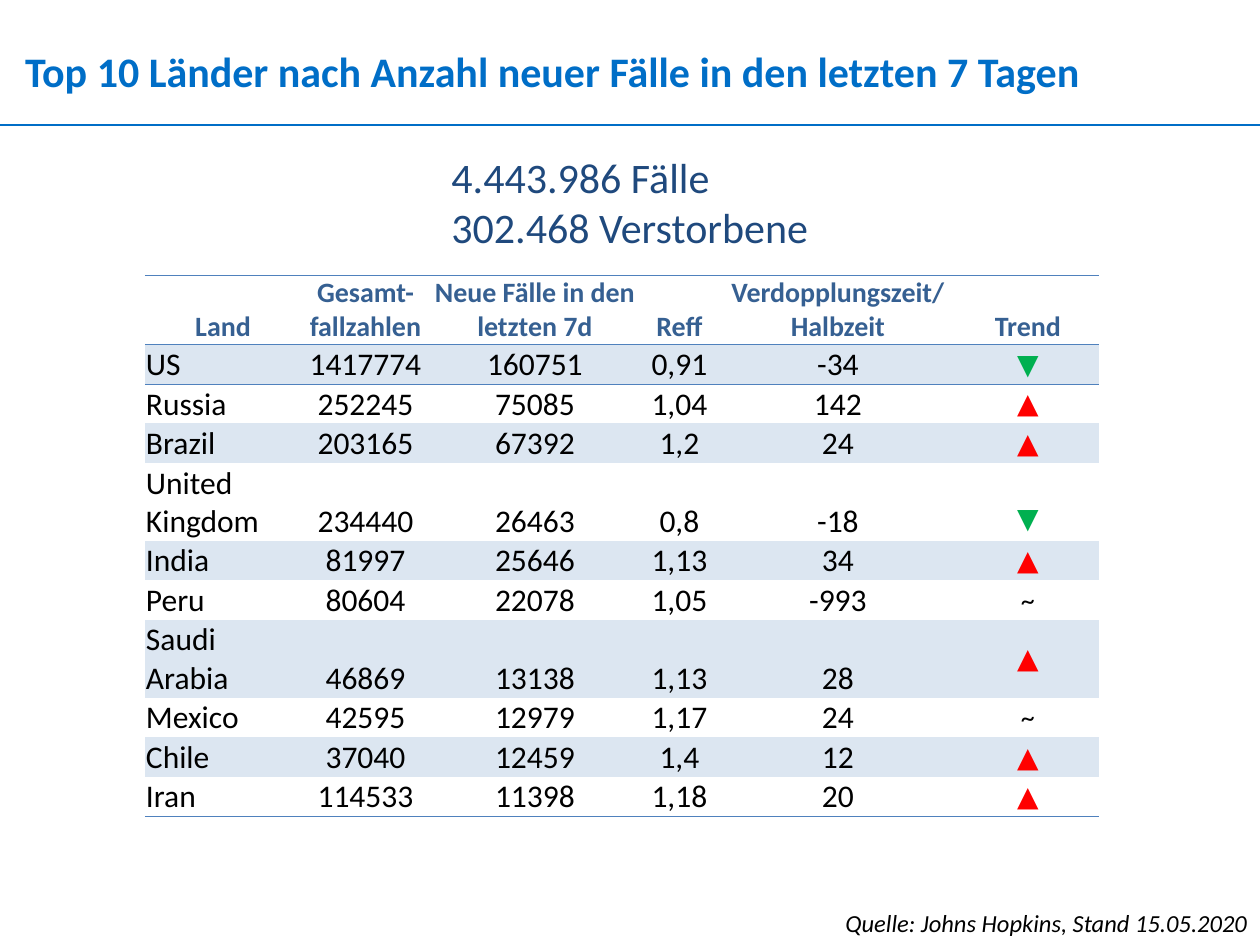
from copy import deepcopy

from pptx import Presentation
from pptx.dml.color import RGBColor
from pptx.enum.shapes import MSO_CONNECTOR
from pptx.enum.text import MSO_ANCHOR, MSO_AUTO_SIZE, PP_ALIGN
from pptx.oxml import parse_xml
from pptx.oxml.ns import nsdecls, qn
from pptx.util import Emu, Pt

PX_PER_INCH = 126
FONT = "Calibri"
TITLE_BLUE = RGBColor(0x00, 0x6E, 0xC7)
TOTALS_BLUE = RGBColor(0x1F, 0x49, 0x7D)
HEADER_BLUE = RGBColor(0x36, 0x60, 0x92)
BORDER_BLUE = RGBColor(0x4F, 0x81, 0xBD)
BAND_BLUE = RGBColor(0xDC, 0xE6, 0xF1)
GREEN = RGBColor(0x00, 0xB0, 0x50)
RED = RGBColor(0xFF, 0x00, 0x00)
BLACK = RGBColor(0x00, 0x00, 0x00)

TREND_COLORS = {"▼": GREEN, "▲": RED, "~": BLACK}
NO_STYLE = "{2D5ABB26-0587-4C30-8999-92F81FD0307C}"
COLUMN_WIDTHS = [156, 129, 210, 79, 238, 142]
HEADER_HEIGHT, ROW_HEIGHT = 64, 35
HEADERS = ["Land", "Gesamt-fallzahlen", "Neue Fälle in den letzten 7d", "Reff",
           "Verdopplungszeit/\nHalbzeit", "Trend"]
COUNTRIES = [
    ["US", "1417774", "160751", "0,91", "-34", "▼"],
    ["Russia", "252245", "75085", "1,04", "142", "▲"],
    ["Brazil", "203165", "67392", "1,2", "24", "▲"],
    ["United Kingdom", "234440", "26463", "0,8", "-18", "▼"],
    ["India", "81997", "25646", "1,13", "34", "▲"],
    ["Peru", "80604", "22078", "1,05", "-993", "~"],
    ["Saudi Arabia", "46869", "13138", "1,13", "28", "▲"],
    ["Mexico", "42595", "12979", "1,17", "24", "~"],
    ["Chile", "37040", "12459", "1,4", "12", "▲"],
    ["Iran", "114533", "11398", "1,18", "20", "▲"],
]


def px(length):
    return Emu(round(length * 914400 / PX_PER_INCH))


def format_text(text_frame, size, color, bold=False, italic=False, align=PP_ALIGN.LEFT):
    for paragraph in text_frame.paragraphs:
        paragraph.alignment = align
        for run in paragraph.runs:
            font = run.font
            font.name, font.size = FONT, Pt(size)
            font.bold, font.italic = bold, italic
            font.color.rgb = color
        # Line breaks take the size of the text around them
        for line_break in paragraph._p.findall(qn("a:br")):
            line_break.insert(0, deepcopy(paragraph.runs[0]._r.rPr))


def add_text(slide, box, text, size, color, margins=True, wrap=True, **style):
    shape = slide.shapes.add_textbox(*map(px, box))
    text_frame = shape.text_frame
    text_frame.text = text
    text_frame.word_wrap = wrap
    text_frame.auto_size = MSO_AUTO_SIZE.SHAPE_TO_FIT_TEXT
    if not margins:
        text_frame.margin_left = text_frame.margin_right = 0
        text_frame.margin_top = text_frame.margin_bottom = 0
    format_text(text_frame, size, color, **style)


def add_rule(slide, y, width):
    line = slide.shapes.add_connector(MSO_CONNECTOR.STRAIGHT, 0, px(y), px(width), px(y))
    line.line.color.rgb = TITLE_BLUE
    line.line.width = Pt(1.5)
    line._element.spPr.append(parse_xml(f"<a:effectLst {nsdecls('a')}/>"))


def add_border(cell, side):
    cell._tc.get_or_add_tcPr().append(parse_xml(
        f'<a:{side} {nsdecls("a")} w="{Pt(0.5)}"><a:solidFill>'
        f'<a:srgbClr val="{BORDER_BLUE}"/></a:solidFill></a:{side}>'))


def fill_cell(cell, text, size, color, banded, borders, **style):
    cell.text_frame.text = text
    cell.margin_left = cell.margin_right = cell.margin_top = px(1)
    cell.margin_bottom = 0
    cell.vertical_anchor = MSO_ANCHOR.BOTTOM
    format_text(cell.text_frame, size, color, **style)
    for side in borders:
        add_border(cell, side)
    if banded:
        cell.fill.solid()
        cell.fill.fore_color.rgb = BAND_BLUE
    else:
        cell.fill.background()


def add_country_table(slide, left, top):
    height = HEADER_HEIGHT + ROW_HEIGHT * len(COUNTRIES)
    frame = slide.shapes.add_table(len(COUNTRIES) + 1, len(HEADERS), px(left), px(top),
                                   px(sum(COLUMN_WIDTHS)), px(height))
    table = frame.table
    table._tbl.tblPr.find(qn("a:tableStyleId")).text = NO_STYLE
    table.first_row = table.horz_banding = False
    for column, width in zip(table.columns, COLUMN_WIDTHS):
        column.width = px(width)
    for index, row in enumerate(table.rows):
        row.height = px(ROW_HEIGHT if index else HEADER_HEIGHT)

    # Header row
    for column, header in enumerate(HEADERS):
        fill_cell(table.cell(0, column), header, 16, HEADER_BLUE, False, ["lnT", "lnB"],
                  bold=True, align=PP_ALIGN.CENTER)

    # Country rows, every other one banded
    for row, values in enumerate(COUNTRIES, start=1):
        borders = {1: ["lnT"], len(COUNTRIES): ["lnB"]}.get(row, [])
        for column, value in enumerate(values):
            is_trend = column == len(HEADERS) - 1
            cell = table.cell(row, column)
            fill_cell(cell, value, 16 if is_trend else 18,
                      TREND_COLORS[value] if is_trend else BLACK, row % 2 == 1, borders,
                      align=PP_ALIGN.CENTER if column else PP_ALIGN.LEFT)
            if is_trend and values[0] == "United Kingdom":
                cell.margin_bottom = px(5)
            elif is_trend:
                cell.vertical_anchor = MSO_ANCHOR.MIDDLE


def main():
    presentation = Presentation()
    presentation.slide_width, presentation.slide_height = px(1260), px(945)
    slide = presentation.slides.add_slide(presentation.slide_layouts[6])

    add_country_table(slide, 145, 275)

    # Title and rule
    add_text(slide, (25, 46, 1213, 50),
             "Top 10 Länder nach Anzahl neuer Fälle in den letzten 7 Tagen",
             24, TITLE_BLUE, margins=False, bold=True)
    add_rule(slide, 125, 1260)

    # Worldwide totals
    add_text(slide, (439, 145, 386, 115), "4.443.986 Fälle\n302.468 Verstorbene",
             24, TOTALS_BLUE, wrap=False)

    # Source line
    add_text(slide, (814, 902, 446, 43), "Quelle: Johns Hopkins, Stand 15.05.2020",
             14, BLACK, italic=True, align=PP_ALIGN.RIGHT)

    presentation.save("out.pptx")


if __name__ == "__main__":
    main()
